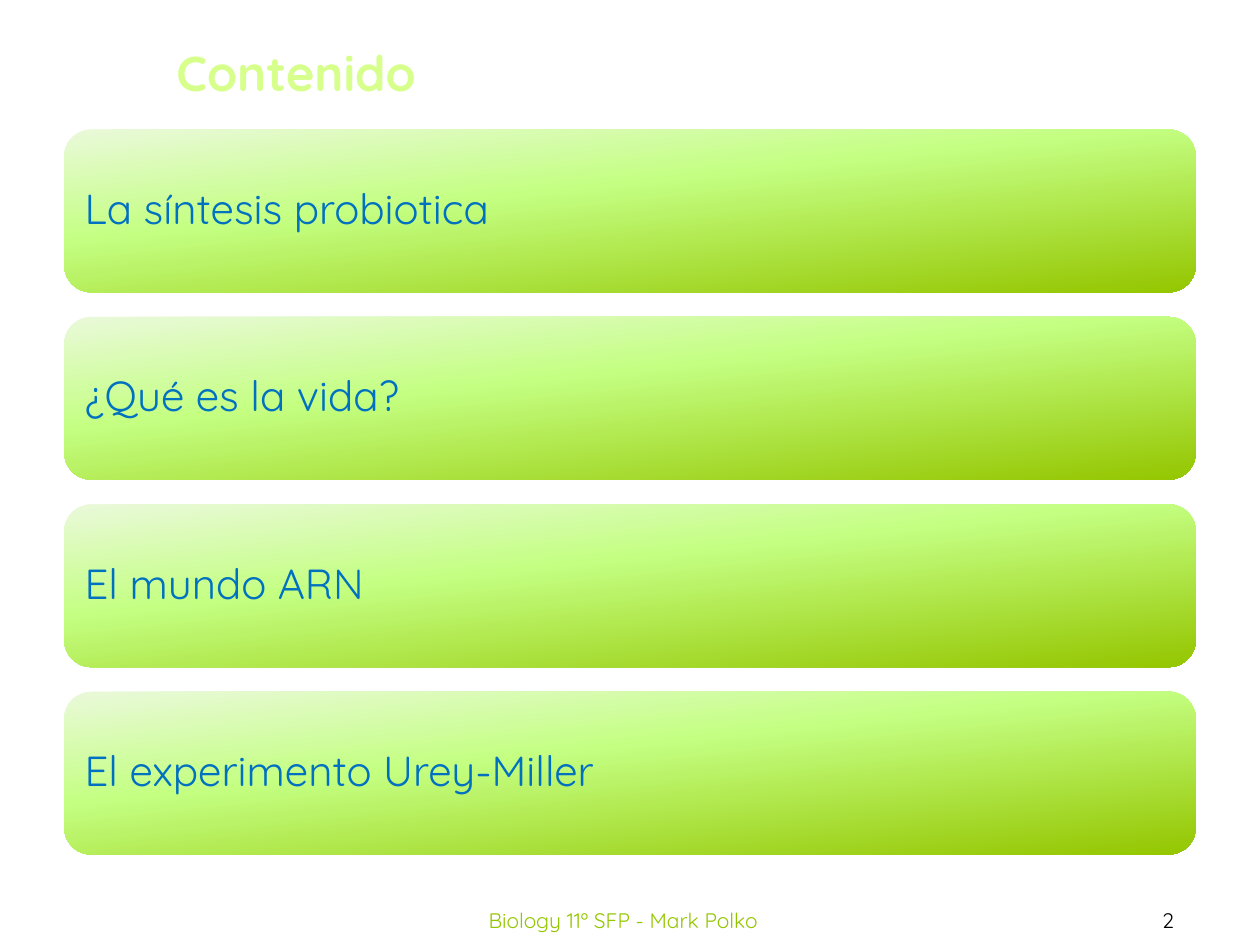
from copy import deepcopy

from pptx import Presentation
from pptx.dml import color
from pptx.enum import shapes, text
from pptx.oxml import ns
from pptx.util import Pt


def rgb(value):
    return color.RGBColor.from_string(value)


def write(box, words, size, hue, align, anchor, bold=False):
    frame = box.text_frame
    frame.vertical_anchor = anchor
    para = frame.paragraphs[0]
    para.alignment = align
    span = para.add_run()
    span.text = words
    span.font.name = "Quicksand"
    span.font.size = Pt(size)
    span.font.bold = bold
    span.font.color.rgb = rgb(hue)
    return para


deck = Presentation()
deck.slide_width, deck.slide_height = Pt(720), Pt(540)
page = deck.slides.add_slide(deck.slide_layouts[6])

CENTER, LEFT = text.PP_ALIGN.CENTER, text.PP_ALIGN.LEFT
TOP, MIDDLE = text.MSO_ANCHOR.TOP, text.MSO_ANCHOR.MIDDLE
topics = ["La síntesis probiotica", "¿Qué es la vida?", "El mundo ARN", "El experimento Urey-Miller"]
gradient = [(0, "EAF9DA"), (0.4, "C4FF82"), (1, "94C600")]

for index, topic in enumerate(topics):
    bar = page.shapes.add_shape(
        shapes.MSO_SHAPE.ROUNDED_RECTANGLE, Pt(36.7), Pt(74 + 107.1 * index), Pt(646.6), Pt(93)
    )
    bar.shadow.inherit = False
    bar.line.fill.background()
    bar.fill.gradient()
    bar.fill.gradient_angle = 276
    stop_list = bar._element.spPr.find(ns.qn("a:gradFill")).find(ns.qn("a:gsLst"))
    stop_list.insert(1, deepcopy(stop_list[0]))
    for stop, (position, hue) in zip(bar.fill.gradient_stops, gradient):
        stop.position = position
        stop.color.rgb = rgb(hue)
    para = write(bar, topic, 24, "0070C0", LEFT, MIDDLE)
    para.line_spacing = 0.9
    bar.text_frame.word_wrap = True

title = page.shapes.add_textbox(Pt(90), Pt(20.9), Pt(158.4), Pt(41))
write(title, "Contenido", 28, "D6FF8C", CENTER, TOP, bold=True)
title.text_frame.word_wrap = False
title.text_frame.auto_size = text.MSO_AUTO_SIZE.SHAPE_TO_FIT_TEXT

footers = [
    (218.2, 275.8, "Biology 11º SFP - Mark Polko", "94C600"),
    (614.9, 105.1, "2", "000000"),
]
for left, width, words, hue in footers:
    footer = page.shapes.add_textbox(Pt(left), Pt(511.2), Pt(width), Pt(28.8))
    write(footer, words, 12, hue, CENTER, MIDDLE)
    footer.text_frame.word_wrap = True

deck.save("out.pptx")
